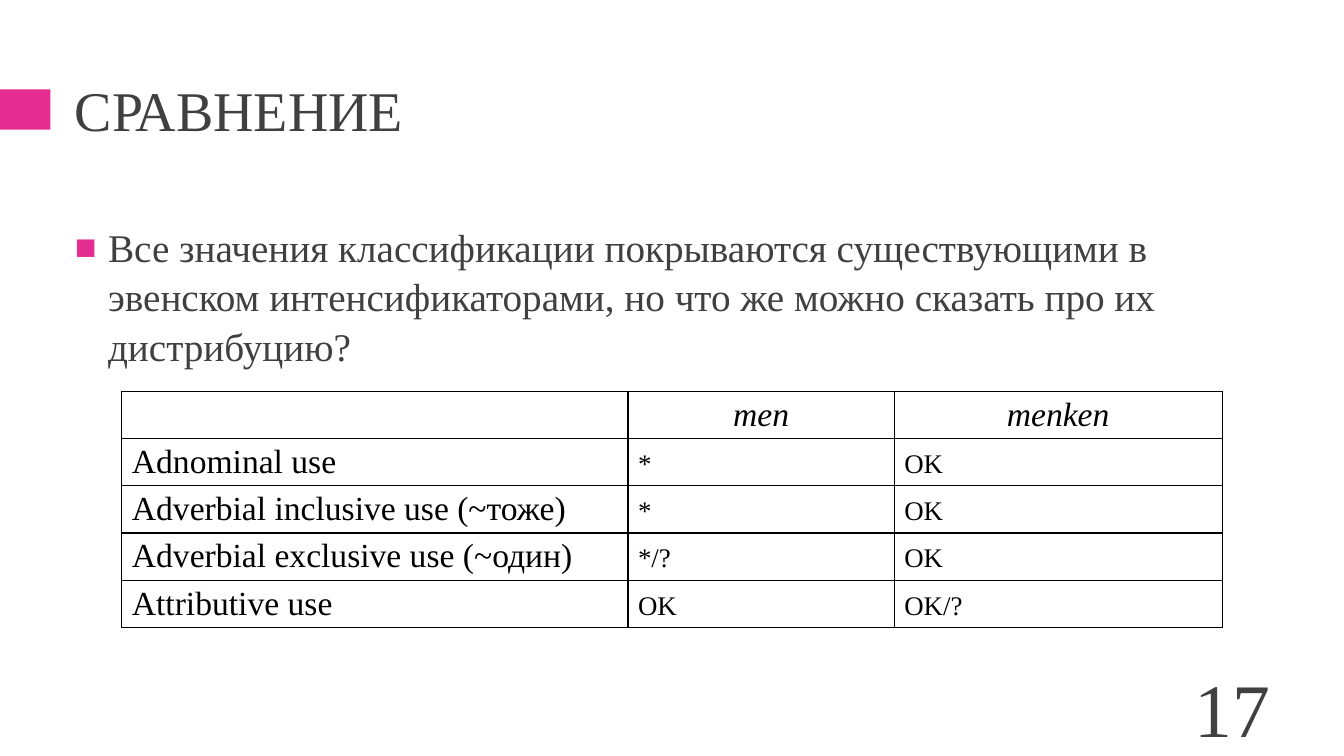
import lxml.etree
import pptx
import pptx.dml.color
import pptx.enum.shapes
import pptx.enum.text
import pptx.oxml
import pptx.oxml.ns
import pptx.util

Cm = pptx.util.Cm
Align = pptx.enum.text.PP_ALIGN
Anchor = pptx.enum.text.MSO_ANCHOR
qn = pptx.oxml.ns.qn

FONT = "Times New Roman"
PINK = "E32D91"
GREY = "404040"
BLACK = "000000"
USES = [
    ("Adnominal use", "*", "ok"),
    ("Adverbial inclusive use (~тоже)", "*", "ok"),
    ("Adverbial exclusive use (~один)", "*/?", "ok"),
    ("Attributive use", "ok", "ok/?"),
]


def rgb(value):
    """Turn a hex string into a colour."""
    return pptx.dml.color.RGBColor.from_string(value)


def place(shape, left, top, width, height):
    """Move a shape to a box given in centimetres."""
    shape.left, shape.top = Cm(left), Cm(top)
    shape.width, shape.height = Cm(width), Cm(height)


def write(text_frame, text, size, color, align=Align.LEFT):
    """Fill a text frame with one formatted paragraph and return it."""
    text_frame.text = text
    paragraph = text_frame.paragraphs[0]
    paragraph.alignment = align
    for run in paragraph.runs:
        run.font.name = FONT
        run.font.size = pptx.util.Pt(size)
        run.font.color.rgb = rgb(color)
    return paragraph


def fix_frame(text_frame, anchor):
    """Wrap the text at a fixed size and anchor it."""
    text_frame.word_wrap = True
    text_frame.auto_size = pptx.enum.text.MSO_AUTO_SIZE.NONE
    text_frame.vertical_anchor = anchor


def add_title(slide, left, top, width, height):
    """Set the title with its accent block at the slide edge."""
    block_height = 1.02
    block = slide.shapes.add_shape(
        pptx.enum.shapes.MSO_SHAPE.RECTANGLE,
        0, Cm(top + (height - block_height) / 2), Cm(left - 0.36), Cm(block_height))
    block.shadow.inherit = False
    block.fill.solid()
    block.fill.fore_color.rgb = rgb(PINK)
    block.line.fill.background()
    title = slide.shapes.title
    place(title, left, top, width, height)
    fix_frame(title.text_frame, Anchor.MIDDLE)
    write(title.text_frame, "СРАВНЕНИЕ", 40, GREY)


def add_question(slide, left, top, width, height):
    """Set the bulleted question in the body placeholder."""
    body = slide.placeholders[1]
    place(body, left, top, width, height)
    fix_frame(body.text_frame, Anchor.TOP)
    paragraph = write(
        body.text_frame,
        "Все значения классификации покрываются существующими в эвенском "
        "интенсификаторами, но что же можно сказать про их дистрибуцию?",
        28, GREY)
    paragraph.line_spacing = 1.05
    paragraph.space_after = pptx.util.Pt(6)
    properties = paragraph._p.get_or_add_pPr()
    properties.set("marL", str(Cm(0.84)))
    properties.set("indent", str(Cm(-0.84)))
    color = lxml.etree.SubElement(properties, qn("a:buClr"))
    lxml.etree.SubElement(color, qn("a:srgbClr"), val=PINK)
    lxml.etree.SubElement(properties, qn("a:buSzPct"), val="92000")
    lxml.etree.SubElement(properties, qn("a:buChar"), char="■")


def add_borders(cell):
    """Draw a thin black line on each side of a cell."""
    properties = cell._tc.get_or_add_tcPr()
    for index, side in enumerate(("a:lnL", "a:lnR", "a:lnT", "a:lnB")):
        line = lxml.etree.Element(qn(side), w=str(pptx.util.Pt(1)))
        fill = lxml.etree.SubElement(line, qn("a:solidFill"))
        lxml.etree.SubElement(fill, qn("a:srgbClr"), val=BLACK)
        properties.insert(index, line)


def add_uses_table(slide, left, top, width, height):
    """Compare the uses of the two intensifiers in a ruled table."""
    rows = [("", "men", "menken"), *USES]
    shares = (0.46, 0.242, 0.298)
    table = slide.shapes.add_table(
        len(rows), len(shares), Cm(left), Cm(top), Cm(width), Cm(height)).table
    table.first_row = table.horz_banding = False
    for column, share in zip(table.columns, shares):
        column.width = Cm(width * share)
    for row_index, texts in enumerate(rows):
        table.rows[row_index].height = Cm(height / len(rows))
        for column_index, text in enumerate(texts):
            cell = table.cell(row_index, column_index)
            cell.fill.background()
            cell.vertical_anchor = Anchor.MIDDLE
            cell.margin_top = cell.margin_bottom = Cm(0.1)
            add_borders(cell)
            align = Align.LEFT if row_index else Align.CENTER
            paragraph = write(cell.text_frame, text, 24, BLACK, align)
            for run in paragraph.runs:
                run.font.italic = row_index == 0
                if row_index and column_index:
                    run.font._element.set("cap", "small")


def add_slide_number(slide, left, top, width, height):
    """Put the large slide number at the bottom right."""
    box = slide.shapes.add_textbox(Cm(left), Cm(top), Cm(width), Cm(height))
    fix_frame(box.text_frame, Anchor.MIDDLE)
    write(box.text_frame, "17", 54, GREY, Align.RIGHT)


def main():
    """Build and save the comparison slide."""
    presentation = pptx.Presentation()
    presentation.slide_width = Cm(33.87)
    presentation.slide_height = Cm(19.05)
    slide = presentation.slides.add_slide(presentation.slide_layouts[1])
    add_title(slide, 1.63, 1.73, 30.63, 2.06)
    add_question(slide, 1.63, 5.44, 30.63, 12.42)
    add_slide_number(slide, 29.34, 17.32, 2.92, 1.02)
    add_uses_table(slide, 3.07, 9.86, 27.73, 5.95)
    presentation.save("out.pptx")


if __name__ == "__main__":
    main()
